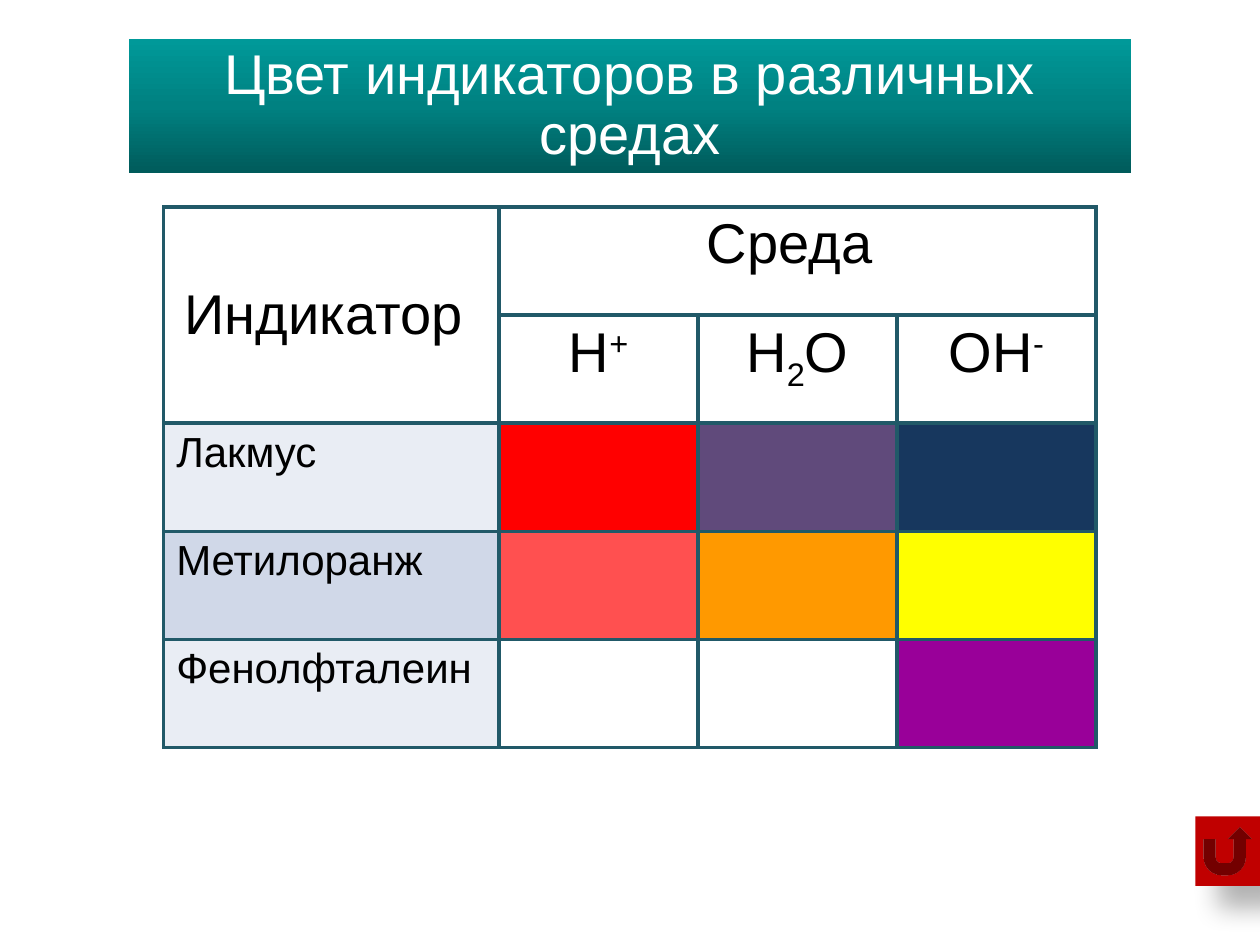
from dataclasses import dataclass

from lxml.etree import SubElement
from pptx import Presentation
from pptx.dml.color import RGBColor
from pptx.enum.shapes import MSO_SHAPE as Shape
from pptx.enum.text import MSO_ANCHOR as Anchor, PP_ALIGN as Align
from pptx.oxml import parse_xml
from pptx.oxml.ns import nsdecls, qn
from pptx.util import Cm, Pt


@dataclass(frozen=True)
class Theme:
    font: str = "Arial"
    heading_size: int = 32
    label_size: int = 24
    text: str = "000000"
    title_text: str = "FFFFFF"
    title_stops: tuple = ((0, "005B5B"), (50, "008181"), (100, "009999"))
    border: str = "215968"
    border_width: float = 2.25
    bands: tuple = ("E9EDF4", "D0D8E8")
    button: str = "C00000"
    shadow: str = "000000"


class SlideBuilder:
    def __init__(self, slide, theme):
        self.slide = slide
        self.theme = theme

    def add_text(self, frame, runs, size, color, align=Align.CENTER):
        """Fill the first paragraph with (text, baseline percent) runs."""
        paragraph = frame.paragraphs[0]
        paragraph.alignment = align
        font = paragraph.font
        font.name, font.size = self.theme.font, Pt(size)
        font.color.rgb = RGBColor.from_string(color)
        for text, baseline in runs:
            run = paragraph.add_run()
            run.text = text
            if baseline:
                run.font._element.set("baseline", str(baseline * 1000))
        return paragraph

    def shape(self, kind, left, top, width, height):
        shape = self.slide.shapes.add_shape(
            kind, Cm(left), Cm(top), Cm(width), Cm(height))
        shape.shadow.inherit = False
        shape.line.fill.background()
        return shape

    def title(self, text, *box):
        banner = self.shape(Shape.RECTANGLE, *box)
        banner.fill.gradient()
        banner.fill.gradient_angle = 90
        stops = banner._element.spPr.find(".//" + qn("a:gsLst"))
        stops.clear()
        for position, color in self.theme.title_stops:
            stop = SubElement(stops, qn("a:gs"), pos=str(position * 1000))
            SubElement(stop, qn("a:srgbClr"), val=color)
        banner.text_frame.word_wrap = True
        banner.text_frame.vertical_anchor = Anchor.MIDDLE
        paragraph = self.add_text(banner.text_frame, [(text, 0)],
                                  self.theme.heading_size, self.theme.title_text)
        paragraph.line_spacing = 0.9

    def table(self, left, top, widths, row_height, row_count):
        table = self.slide.shapes.add_table(
            row_count, len(widths), Cm(left), Cm(top),
            Cm(sum(widths)), Cm(row_height * row_count)).table
        table.first_row = table.horz_banding = False
        for column, width in zip(table.columns, widths):
            column.width = Cm(width)
        for row in table.rows:
            row.height = Cm(row_height)
        for cell in table.iter_cells():
            cell.fill.background()
            self.cell_borders(cell)
        return table

    def cell_borders(self, cell):
        properties = cell._tc.get_or_add_tcPr()
        for index, side in enumerate("LRTB"):
            properties.insert(index, parse_xml(
                f'<a:ln{side} {nsdecls("a")} w="{Pt(self.theme.border_width)}">'
                f'<a:solidFill><a:srgbClr val="{self.theme.border}"/></a:solidFill>'
                f'</a:ln{side}>'))

    def heading(self, cell, *runs):
        self.add_text(cell.text_frame, runs, self.theme.heading_size, self.theme.text)

    def label(self, cell, text):
        self.add_text(cell.text_frame, [(text, 0)], self.theme.label_size,
                      self.theme.text, Align.LEFT)

    def paint(self, target, color):
        target.fill.solid()
        target.fill.fore_color.rgb = RGBColor.from_string(color)

    def return_button(self, *box):
        button = self.shape(Shape.ACTION_BUTTON_RETURN, *box)
        self.paint(button, self.theme.button)
        effects = button._element.spPr.find(qn("a:effectLst"))
        effects.append(parse_xml(
            f'<a:outerShdw {nsdecls("a")} blurRad="{Pt(15)}" dist="{Pt(18)}" '
            'dir="2700000" algn="ctr" rotWithShape="0">'
            f'<a:srgbClr val="{self.theme.shadow}"><a:alpha val="30000"/></a:srgbClr>'
            '</a:outerShdw>'))


MEDIA = (
    (("H", 0), ("+", 30)),
    (("H", 0), ("2", -25), ("O", 0)),
    (("OH", 0), ("-", 30)),
)
INDICATORS = (
    ("Лакмус", ("FF0000", "604A7B", "17375E")),
    ("Метилоранж", ("FF5050", "FF9900", "FFFF00")),
    ("Фенолфталеин", (None, None, "990099")),
)


def main():
    deck = Presentation()
    deck.slide_width, deck.slide_height = Cm(25.4), Cm(19.05)
    theme = Theme()
    builder = SlideBuilder(deck.slides.add_slide(deck.slide_layouts[6]), theme)

    # Title banner
    builder.title("Цвет индикаторов в различных средах", 2.6, 0.79, 20.2, 2.7)

    # Table headings
    table = builder.table(3.3, 4.17, (6.76, 4.01, 4.01, 4.01), 2.18, 5)
    indicator, medium = table.cell(0, 0), table.cell(0, 1)
    indicator.merge(table.cell(1, 0))
    medium.merge(table.cell(0, 3))
    indicator.vertical_anchor = Anchor.MIDDLE
    builder.heading(indicator, ("Индикатор ", 0))
    builder.heading(medium, ("Среда ", 0))
    for column, formula in enumerate(MEDIA, 1):
        builder.heading(table.cell(1, column), *formula)

    # Indicator colours in each medium
    for index, (indicator_name, colors) in enumerate(INDICATORS):
        row = index + 2
        builder.label(table.cell(row, 0), indicator_name)
        band = theme.bands[index % len(theme.bands)]
        for column, color in enumerate((band, *colors)):
            if color:
                builder.paint(table.cell(row, column), color)

    # Return button
    builder.return_button(24.1, 16.46, 1.3, 1.4)

    deck.save("out.pptx")


if __name__ == "__main__":
    main()
